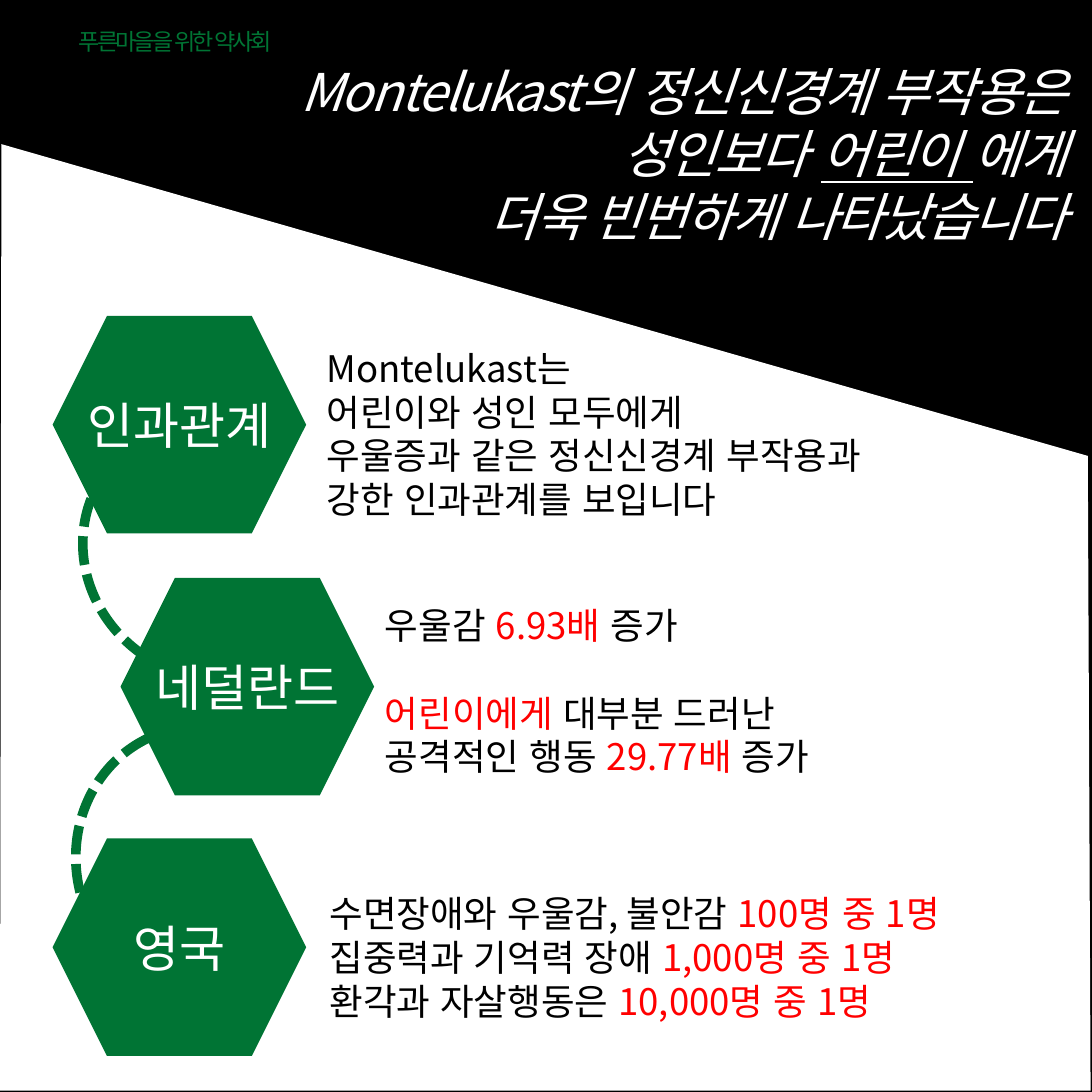
from dataclasses import dataclass

from pptx import Presentation
from pptx.dml.color import RGBColor
from pptx.enum.dml import MSO_LINE
from pptx.enum.shapes import MSO_SHAPE
from pptx.enum.text import MSO_ANCHOR, PP_ALIGN
from pptx.oxml.ns import qn
from pptx.util import Emu, Inches, Pt

SIDE = Inches(7.88)
FONT = "Noto Sans CJK KR"
COLORS = {"black": "000000", "white": "FFFFFF", "green": "007434", "red": "FF0000"}
HEX_W, HEX_H = 23.22, 19.92
ARC_W, ARC_H = 24.75, 23.22
BODY_SIZE = 19


@dataclass
class Run:
    text: str
    color: str = "black"
    underline: bool = False


@dataclass
class Finding:
    """A hexagon label with its text; places are percent of the slide side."""
    label: str
    hex_at: tuple[float, float]
    text_box: tuple[float, float, float, float]
    lines: list[list[Run]]
    gaps: tuple[int, ...] = ()


@dataclass
class Link:
    left: float
    top: float
    rotation: float


PANEL = [(0.13, 13.2), (99.62, 41.75), (99.87, 99.87), (0, 99.87)]
HEADLINE = [
    [Run("Montelukast의 정신신경계 부작용은", "white")],
    [Run("성인보다 ", "white"), Run("어린이 ", "white", True), Run("에게", "white")],
    [Run("더욱 빈번하게 나타났습니다", "white")],
]
FINDINGS = [
    Finding("인과관계", (4.82, 28.93), (28.68, 31.03, 64.97, 17.51), [
        [Run("Montelukast는")],
        [Run("어린이와 성인 모두에게")],
        [Run("우울증과 같은 정신신경계 부작용과")],
        [Run("강한 인과관계를 보입니다")],
    ]),
    Finding("네덜란드", (11.04, 52.92), (34.01, 54.57, 64.97, 17.51), [
        [Run("우울감 "), Run("6.93배 ", "red"), Run("증가")],
        [Run("어린이에게", "red"), Run(" 대부분 드러난")],
        [Run("공격적인 행동 "), Run("29.77배", "red"), Run(" 증가")],
    ], gaps=(1,)),
    Finding("영국", (4.82, 76.78), (28.93, 80.96, 66, 13.45), [
        [Run("수면장애와 우울감, 불안감 "), Run("100명 중 1명", "red")],
        [Run("집중력과 기억력 장애 "), Run("1,000명 중 1명", "red")],
        [Run("환각과 자살행동은 "), Run("10,000명 중 1명", "red")],
    ]),
]
LINKS = [Link(7.36, 38.83, 212.6), Link(6.22, 67.26, 255.8)]


def rgb(name: str) -> RGBColor:
    return RGBColor.from_string(COLORS[name])


def share(percent: float) -> Emu:
    return Emu(round(SIDE * percent / 100))


def write(tf, lines: list[list[Run]], size: float, align=PP_ALIGN.LEFT,
          italic: bool = False, tracking: float = 0, gaps: tuple[int, ...] = ()) -> None:
    """Fill a text frame; gaps lists the lines that have a free line above."""
    tf.word_wrap = True
    for i, line in enumerate(lines):
        p = tf.paragraphs[0] if i == 0 else tf.add_paragraph()
        p.alignment = align
        p.line_spacing = 1.0
        p.space_before = Pt(1.2 * size if i in gaps else 0)
        for run in line:
            r = p.add_run()
            r.text = run.text
            r.font.size = Pt(size)
            r.font.name = FONT
            r.font.color.rgb = rgb(run.color)
            if italic:
                r.font.italic = True
            if run.underline:
                r.font.underline = True
            props = r.font._element
            props.set("lang", "ko-KR")
            if tracking:
                props.set("spc", str(round(tracking * 100)))
            ea = props.makeelement(qn("a:ea"), {"typeface": FONT})
            props.find(qn("a:latin")).addnext(ea)


def paint(sp, color: str) -> None:
    sp.shadow.inherit = False
    sp.fill.solid()
    sp.fill.fore_color.rgb = rgb(color)
    sp.line.fill.background()


def add_text(s, box: tuple[float, float, float, float], lines: list[list[Run]],
             size: float, **style) -> None:
    sp = s.shapes.add_textbox(*map(share, box))
    write(sp.text_frame, lines, size, **style)


def add_panel(s) -> None:
    start, *rest = [(share(x), share(y)) for x, y in PANEL]
    builder = s.shapes.build_freeform(*start)
    builder.add_line_segments(rest, close=True)
    paint(builder.convert_to_shape(), "white")


def add_link(s, link: Link) -> None:
    sp = s.shapes.add_shape(MSO_SHAPE.ARC, *map(share, (link.left, link.top, ARC_W, ARC_H)))
    sp.rotation = link.rotation
    sp.shadow.inherit = False
    sp.fill.background()
    sp.line.color.rgb = rgb("green")
    sp.line.width = Pt(5)
    sp.line.dash_style = MSO_LINE.SQUARE_DOT


def add_finding(s, finding: Finding) -> None:
    sp = s.shapes.add_shape(MSO_SHAPE.HEXAGON, *map(share, (*finding.hex_at, HEX_W, HEX_H)))
    paint(sp, "green")
    tf = sp.text_frame
    write(tf, [[Run(finding.label, "white")]], 26, align=PP_ALIGN.CENTER)
    tf.word_wrap = False
    tf.vertical_anchor = MSO_ANCHOR.MIDDLE
    add_text(s, finding.text_box, finding.lines, BODY_SIZE, gaps=finding.gaps)


def add_headline(s) -> None:
    title = s.shapes.title
    title.left, title.top, title.width, title.height = map(share, (6.6, 4.82, 92.39, 19.16))
    tf = title.text_frame
    tf.vertical_anchor = MSO_ANCHOR.TOP
    write(tf, HEADLINE, 27, align=PP_ALIGN.RIGHT, italic=True, tracking=-1)


def main() -> None:
    prs = Presentation()
    prs.slide_width = prs.slide_height = SIDE
    s = prs.slides.add_slide(prs.slide_layouts[5])
    s.background.fill.solid()
    s.background.fill.fore_color.rgb = rgb("black")
    add_panel(s)
    add_text(s, (5.96, 1.9, 22.97, 3.81), [[Run("푸른마을을 위한 약사회", "green")]],
             12, tracking=-1.5)
    for finding in FINDINGS:
        add_finding(s, finding)
    for link in LINKS:
        add_link(s, link)
    add_headline(s)
    prs.save("out.pptx")


if __name__ == "__main__":
    main()
